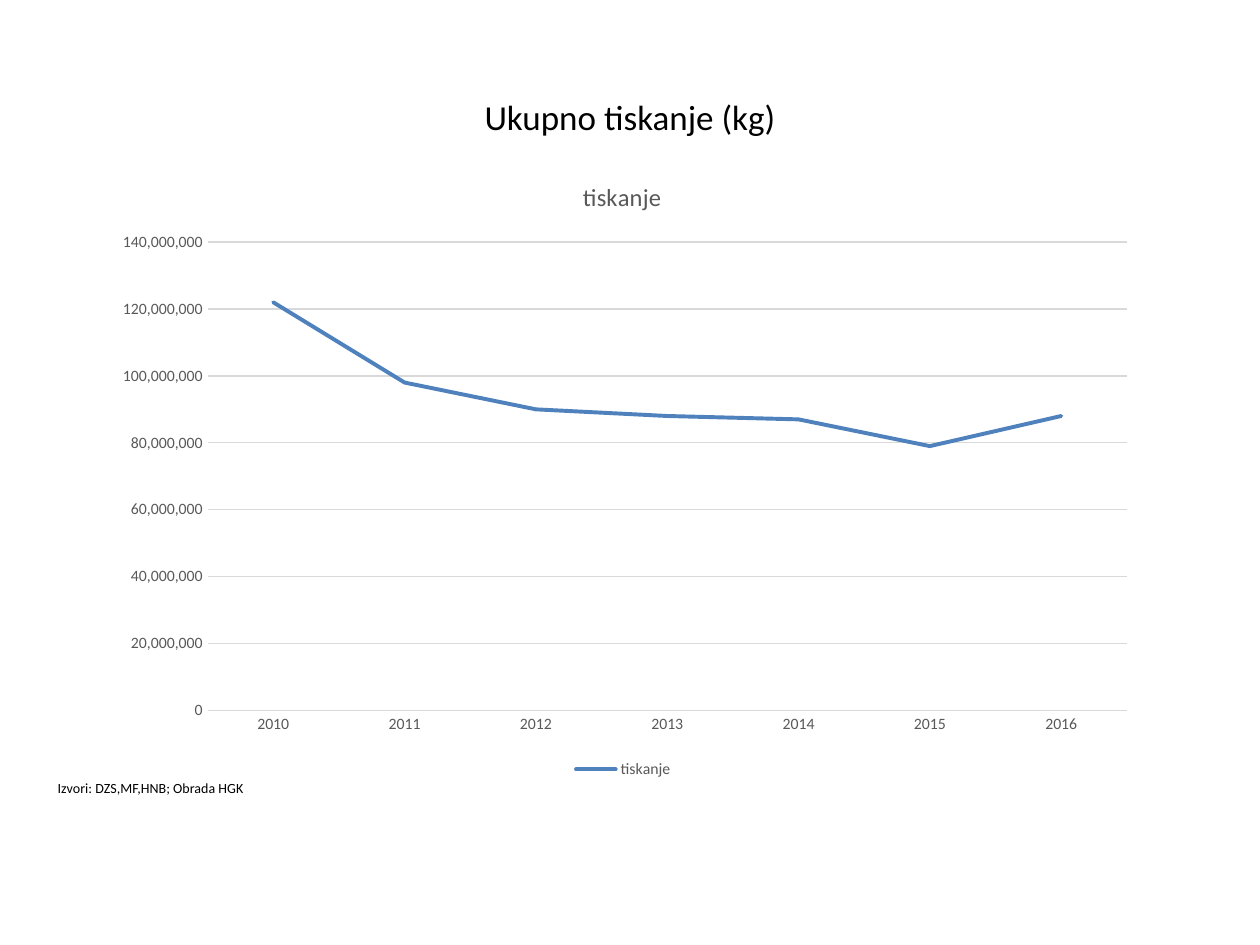
from typing import NamedTuple

from lxml.etree import SubElement
from pptx import Presentation
from pptx.chart.data import CategoryChartData
from pptx.dml.color import RGBColor
from pptx.enum.chart import XL_CHART_TYPE, XL_LEGEND_POSITION, XL_TICK_MARK
from pptx.enum.text import MSO_ANCHOR, MSO_AUTO_SIZE, PP_ALIGN
from pptx.oxml.ns import qn
from pptx.util import Inches, Pt

FONT = "Calibri"
BLACK = "000000"
GRAY = "595959"
GRID = "D9D9D9"
BLUE = "4F81BD"


class YearlyPrinting(NamedTuple):
    year: str
    kilograms: int


PRINTING = [
    YearlyPrinting("2010", 122_000_000),
    YearlyPrinting("2011", 98_000_000),
    YearlyPrinting("2012", 90_000_000),
    YearlyPrinting("2013", 88_000_000),
    YearlyPrinting("2014", 87_000_000),
    YearlyPrinting("2015", 79_000_000),
    YearlyPrinting("2016", 88_000_000),
]


def set_color(color_format, value: str) -> None:
    color_format.rgb = RGBColor.from_string(value)


def style_font(font, size: float, color: str) -> None:
    font.name = FONT
    font.size = Pt(size)
    font.bold = False
    set_color(font.color, color)


def style_line(line, color: str, width: float) -> None:
    set_color(line.color, color)
    line.width = Pt(width)


def style_axis(axis) -> None:
    axis.major_tick_mark = XL_TICK_MARK.NONE
    axis.minor_tick_mark = XL_TICK_MARK.NONE
    style_font(axis.tick_labels.font, 9, GRAY)


def add_heading(slide) -> None:
    heading = slide.shapes.title
    heading.left, heading.top = Inches(0.5), Inches(0.3)
    heading.width, heading.height = Inches(9), Inches(1.25)
    frame = heading.text_frame
    frame.text = "Ukupno tiskanje (kg)"
    frame.vertical_anchor = MSO_ANCHOR.MIDDLE
    frame.paragraphs[0].alignment = PP_ALIGN.CENTER
    style_font(frame.paragraphs[0].runs[0].font, 20, BLACK)


def add_sources(slide) -> None:
    sources = slide.shapes.add_textbox(
        Inches(0.36), Inches(6.14), Inches(6.13), Inches(0.24)
    )
    frame = sources.text_frame
    frame.word_wrap = True
    frame.auto_size = MSO_AUTO_SIZE.SHAPE_TO_FIT_TEXT
    frame.text = "Izvori: DZS,MF,HNB; Obrada HGK"
    style_font(frame.paragraphs[0].runs[0].font, 8, BLACK)


def add_printing_chart(slide) -> None:
    printing = CategoryChartData(number_format="#,##0")
    printing.categories = [point.year for point in PRINTING]
    printing.add_series("tiskanje ", [point.kilograms for point in PRINTING])
    chart = slide.shapes.add_chart(
        XL_CHART_TYPE.LINE,
        Inches(0.81), Inches(1.24), Inches(8.3), Inches(4.98),
        printing,
    ).chart
    style_font(chart.font, 10, BLACK)

    chart.has_title = True
    chart_title = chart.chart_title
    chart_title.include_in_layout = False
    chart_title.text_frame.text = "tiskanje "
    style_font(chart_title.text_frame.paragraphs[0].runs[0].font, 14, GRAY)

    chart.has_legend = True
    chart.legend.position = XL_LEGEND_POSITION.BOTTOM
    chart.legend.include_in_layout = False
    style_font(chart.legend.font, 9, GRAY)

    years, kilograms = chart.category_axis, chart.value_axis
    style_axis(years)
    style_axis(kilograms)
    style_line(years.format.line, GRID, 0.75)
    kilograms.format.line.fill.background()
    kilograms.minimum_scale = 0
    kilograms.maximum_scale = 140_000_000
    kilograms.major_unit = 20_000_000
    kilograms.has_major_gridlines = True
    style_line(kilograms.major_gridlines.format.line, GRID, 0.75)
    kilograms.tick_labels.number_format = "#,##0"
    kilograms.tick_labels.number_format_is_linked = False

    plot = chart.plots[0]
    plot.vary_by_categories = False
    trend = plot.series[0]
    trend.smooth = False
    style_line(trend.format.line, BLUE, 2.25)
    outline = trend.format.line.fill._xPr
    outline.set("cap", "rnd")
    SubElement(outline, qn("a:round"))


def main() -> None:
    presentation = Presentation()
    presentation.slide_width = Inches(10)
    presentation.slide_height = Inches(7.5)
    slide = presentation.slides.add_slide(presentation.slide_layouts[5])
    set_background = slide.background.fill
    set_background.solid()
    set_color(set_background.fore_color, "FFFFFF")
    add_heading(slide)
    add_sources(slide)
    add_printing_chart(slide)
    presentation.save("out.pptx")


if __name__ == "__main__":
    main()
